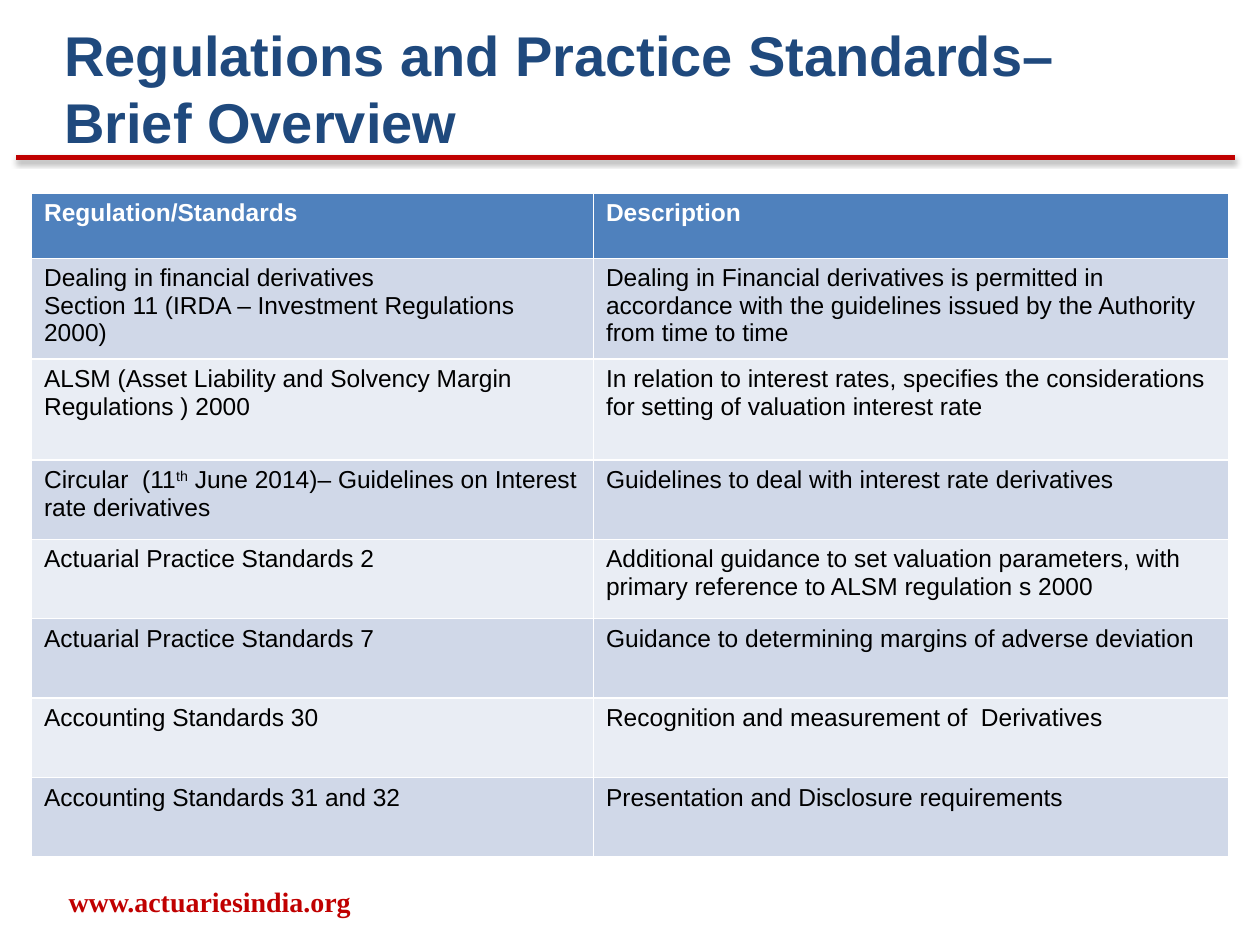
"""Build the regulations and practice standards overview slide."""
from lxml import etree
from pptx import Presentation
from pptx import util as u
from pptx.dml.color import RGBColor
from pptx.enum import shapes, text
from pptx.oxml import parse_xml

COLORS = {"navy": "1F497D", "red": "C00000", "header": "4F81BD", "white": "FFFFFF",
          "black": "000000", "band_dark": "D0D8E8", "band_light": "E9EDF4"}
TITLE = "Regulations and Practice Standards– Brief Overview"
WEBSITE = "www.actuariesindia.org"
# Text between ^ marks is superscript.
ROWS = [
    ("Regulation/Standards", "Description"),
    ("Dealing in financial derivatives\nSection 11 (IRDA – Investment Regulations 2000)",
     "Dealing in Financial derivatives is permitted in accordance with the guidelines "
     "issued by the Authority from time to time"),
    ("ALSM (Asset Liability and Solvency Margin Regulations ) 2000",
     "In relation to interest rates, specifies the considerations for setting of "
     "valuation interest rate"),
    ("Circular  (11^th^ June 2014)– Guidelines on Interest rate derivatives",
     "Guidelines to deal with interest rate derivatives"),
    ("Actuarial Practice Standards 2",
     "Additional guidance to set valuation parameters, with primary reference to "
     "ALSM regulation s 2000"),
    ("Actuarial Practice Standards 7",
     "Guidance to determining margins of adverse deviation"),
    ("Accounting Standards 30", "Recognition and measurement of  Derivatives"),
    ("Accounting Standards 31 and 32", "Presentation and Disclosure requirements"),
]
COLUMN_WIDTHS = [4.46, 5.04]
ROW_HEIGHTS = [0.52] + [0.8] * 2 + [0.63] * 5
ROW_HEIGHTS[1:3] = [0.8, 0.8]
SHADOW = (
    '<a:effectLst xmlns:a="http://schemas.openxmlformats.org/drawingml/2006/main">'
    '<a:outerShdw blurRad="{blur}" dist="{distance}" dir="5400000" rotWithShape="0">'
    '<a:srgbClr val="{color}"><a:alpha val="38000"/></a:srgbClr>'
    '</a:outerShdw></a:effectLst>')


def color(name):
    """Return the named colour."""
    return RGBColor.from_string(COLORS[name])


def write(frame, content, size=14, font="Arial", fill="black", bold=False,
          align=text.PP_ALIGN.LEFT, anchor=text.MSO_ANCHOR.TOP):
    """Write formatted paragraphs into a text frame."""
    frame.word_wrap = True
    frame.vertical_anchor = anchor
    for index, line in enumerate(content.split("\n")):
        paragraph = frame.add_paragraph() if index else frame.paragraphs[0]
        paragraph.alignment = align
        for part, words in enumerate(line.split("^")):
            run = paragraph.add_run()
            run.text = words
            run.font.size, run.font.name, run.font.bold = u.Pt(size), font, bold
            run.font.color.rgb = color(fill)
            if part % 2:
                run.font._element.set("baseline", "30000")


def add_rule(slide):
    """Add the red shadowed line below the title."""
    rule = slide.shapes.add_connector(
        shapes.MSO_CONNECTOR.STRAIGHT,
        u.Inches(0.13), u.Inches(1.25), u.Inches(9.8), u.Inches(1.25))
    rule.line.color.rgb = color("red")
    rule.line.width = u.Pt(3)
    rule._element.spPr.append(parse_xml(SHADOW.format(
        blur=u.Pt(3.1), distance=u.Pt(1.6), color=COLORS["black"])))


def add_standards(slide):
    """Add the table of regulations and standards."""
    table = slide.shapes.add_table(
        len(ROWS), len(COLUMN_WIDTHS), u.Inches(0.25), u.Inches(1.53),
        u.Inches(sum(COLUMN_WIDTHS)), u.Inches(sum(ROW_HEIGHTS))).table
    for column, width in zip(table.columns, COLUMN_WIDTHS):
        column.width = u.Inches(width)
    for number, (row, height) in enumerate(zip(table.rows, ROW_HEIGHTS)):
        row.height = u.Inches(height)
        header = number == 0
        band = "header" if header else "band_dark" if number % 2 else "band_light"
        for cell, content in zip(row.cells, ROWS[number]):
            cell.fill.solid()
            cell.fill.fore_color.rgb = color(band)
            write(cell.text_frame, content, bold=header,
                  fill="white" if header else "black")


def main():
    """Create and save the presentation."""
    presentation = Presentation()
    presentation.slide_width, presentation.slide_height = u.Inches(10), u.Inches(7.5)
    slide = presentation.slides.add_slide(presentation.slide_layouts[5])
    add_rule(slide)
    title = slide.shapes.title
    title.left, title.top = u.Inches(0.41), u.Inches(0.11)
    title.width, title.height = u.Inches(9.01), u.Inches(1.68)
    title.text_frame.auto_size = text.MSO_AUTO_SIZE.NONE
    write(title.text_frame, TITLE, size=32, fill="navy", bold=True)
    website = slide.shapes.add_textbox(
        u.Inches(0.08), u.Inches(6.95), u.Inches(3.17), u.Inches(0.4))
    write(website.text_frame, WEBSITE, size=16, font="Times New Roman", fill="red",
          bold=True, align=text.PP_ALIGN.CENTER, anchor=text.MSO_ANCHOR.MIDDLE)
    add_standards(slide)
    presentation.save("out.pptx")


if __name__ == "__main__":
    main()
